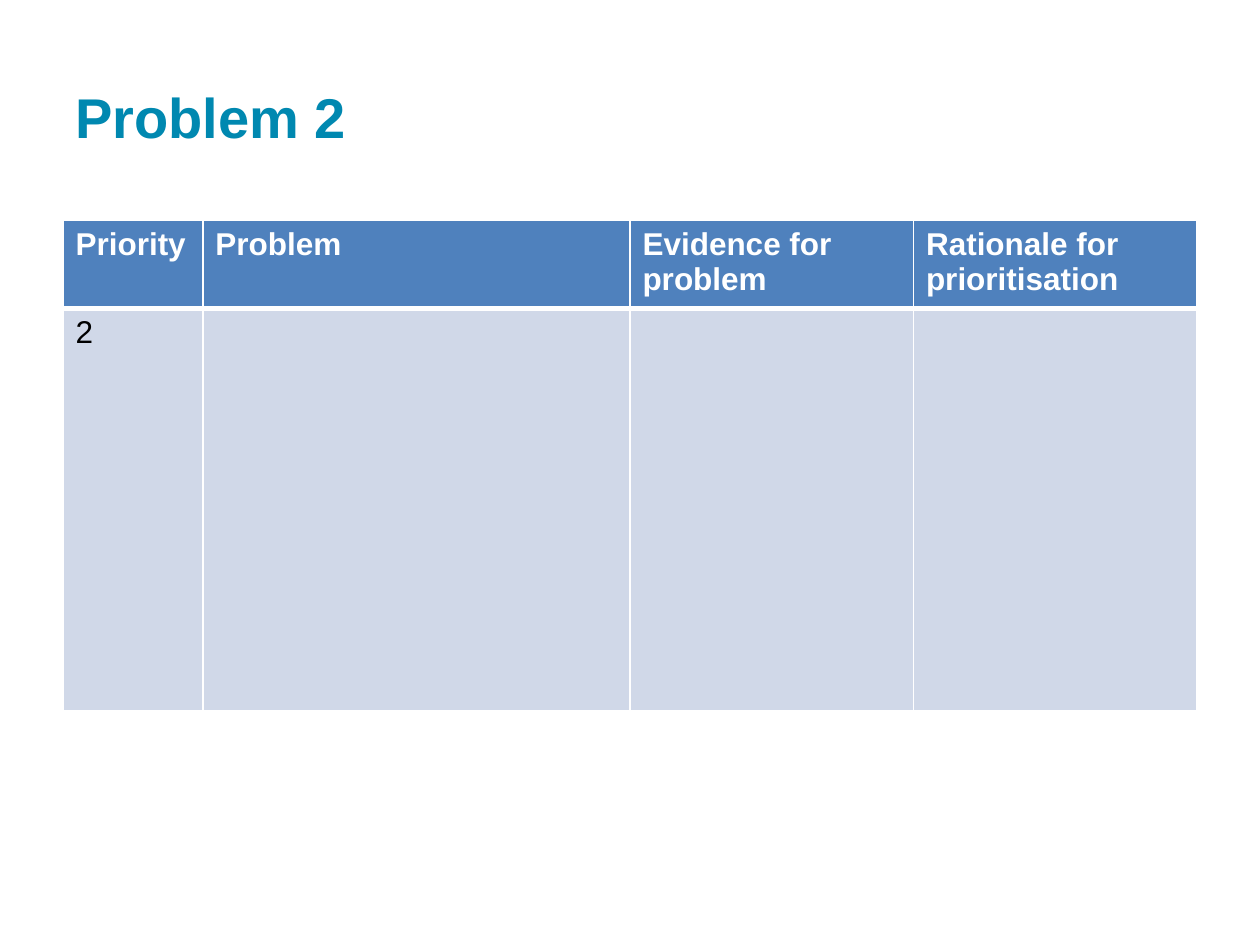
import pptx
import pptx.dml.color
import pptx.enum.text
import pptx.oxml.ns
import pptx.util
from lxml import etree

Inches = pptx.util.Inches
Pt = pptx.util.Pt
RGBColor = pptx.dml.color.RGBColor

TEAL = RGBColor(0x00, 0x88, 0xB0)
HEADER_BLUE = RGBColor(0x4F, 0x81, 0xBD)
BODY_BLUE = RGBColor(0xD0, 0xD8, 0xE8)
WHITE = RGBColor(0xFF, 0xFF, 0xFF)
BLACK = RGBColor(0x00, 0x00, 0x00)

FONT = "Arial"
COLUMN_WIDTHS = (1.11, 3.39, 2.25, 2.25)
ROW_HEIGHTS = (0.65, 3.19)
ROWS = (
    ("Priority", "Problem", "Evidence for problem", "Rationale for prioritisation"),
    ("2", "", "", ""),
)


def format_text(text_frame, size, color, bold):
    for paragraph in text_frame.paragraphs:
        for run in paragraph.runs:
            run.font.name = FONT
            run.font.size = Pt(size)
            run.font.bold = bold
            run.font.color.rgb = color


def set_borders(cell, color, widths):
    """Put solid borders, in points, ahead of the cell's fill."""
    properties = cell._tc.get_or_add_tcPr()
    for index, (side, width) in enumerate(widths.items()):
        line = etree.Element(pptx.oxml.ns.qn(f"a:ln{side}"), w=str(Pt(width)))
        fill = etree.SubElement(line, pptx.oxml.ns.qn("a:solidFill"))
        etree.SubElement(fill, pptx.oxml.ns.qn("a:srgbClr"), val=str(color))
        properties.insert(index, line)


def add_title(slide, left, top, width, height):
    text_frame = slide.shapes.add_textbox(
        Inches(left), Inches(top), Inches(width), Inches(height)).text_frame
    text_frame.word_wrap = True
    text_frame.vertical_anchor = pptx.enum.text.MSO_ANCHOR.MIDDLE
    text_frame.text = "Problem 2"
    format_text(text_frame, 32, TEAL, True)


def add_problem_table(slide, left, top, width, height):
    table = slide.shapes.add_table(
        len(ROWS), len(COLUMN_WIDTHS),
        Inches(left), Inches(top), Inches(width), Inches(height)).table
    for column, share in zip(table.columns, COLUMN_WIDTHS):
        column.width = Inches(width * share / sum(COLUMN_WIDTHS))
    for row, share in zip(table.rows, ROW_HEIGHTS):
        row.height = Inches(height * share / sum(ROW_HEIGHTS))

    for row_index, texts in enumerate(ROWS):
        is_header = row_index == 0
        for column_index, text in enumerate(texts):
            cell = table.cell(row_index, column_index)
            cell.fill.solid()
            cell.fill.fore_color.rgb = HEADER_BLUE if is_header else BODY_BLUE
            # A thick rule separates the header from the body
            set_borders(cell, WHITE, {
                "L": 1, "R": 1,
                "T": 1 if is_header else 3,
                "B": 3 if is_header else 1,
            })
            if text:
                cell.text_frame.text = text
                format_text(cell.text_frame, 18, WHITE if is_header else BLACK, is_header)


def main():
    presentation = pptx.Presentation()
    presentation.slide_width = Inches(10)
    presentation.slide_height = Inches(7.5)
    slide = presentation.slides.add_slide(presentation.slide_layouts[6])

    add_title(slide, 0.5, 0.3, 9, 1.25)
    add_problem_table(slide, 0.5, 1.75, sum(COLUMN_WIDTHS), sum(ROW_HEIGHTS))

    presentation.save("out.pptx")


if __name__ == "__main__":
    main()
